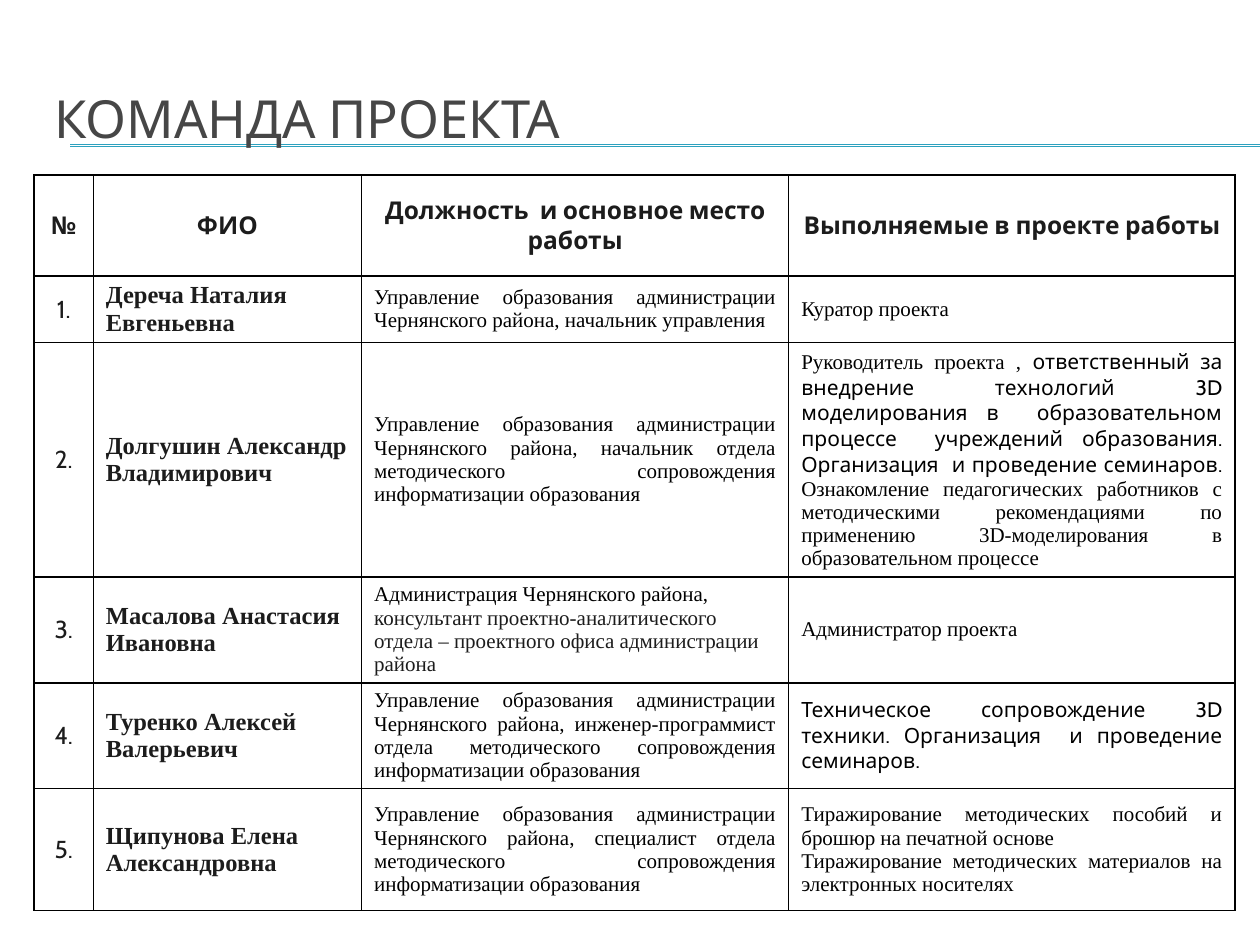
from lxml.etree import SubElement
from pptx import Presentation
from pptx.dml.color import RGBColor
from pptx.enum.shapes import MSO_CONNECTOR
from pptx.enum.text import MSO_ANCHOR, PP_ALIGN
from pptx.oxml.ns import qn
from pptx.util import Cm, Pt

COLOURS = {
    "title": "464646",
    "accent": "2DA2BF",
    "dark": "1C1C1C",
    "black": "000000",
    "white": "FFFFFF",
}
SANS, SERIF = "Cabin", "Times New Roman"
LEFT, CENTRE, JUSTIFY = PP_ALIGN.LEFT, PP_ALIGN.CENTER, PP_ALIGN.JUSTIFY

COLUMN_WIDTHS = [1.19, 5.41, 8.61, 9.0]
ROW_HEIGHTS = [2.03, 1.35, 4.72, 2.13, 2.13, 2.46]
HEADINGS = ["№", "ФИО", "Должность  и основное место работы", "Выполняемые в проекте работы"]
DEPARTMENT = "Управление образования администрации Чернянского района, "
SUPPORT = "методического сопровождения информатизации образования"


def serif(text, colour="black"):
    return text, SERIF, 12, colour, False


def sans(text):
    return text, SANS, 12, "black", False


TEAM = [
    ("Дереча Наталия Евгеньевна",
     (JUSTIFY, [[serif(DEPARTMENT + "начальник управления")]]),
     (LEFT, [[serif("Куратор проекта")]])),
    ("Долгушин Александр Владимирович",
     (JUSTIFY, [[serif(DEPARTMENT + "начальник отдела " + SUPPORT)]]),
     (JUSTIFY, [[
         serif("Руководитель проекта , "),
         sans("ответственный за внедрение технологий 3D моделирования в  образовательном "
              "процессе  учреждений образования. Организация  и проведение семинаров. "),
         serif("Ознакомление педагогических работников с методическими рекомендациями "
               "по применению 3D-моделирования в образовательном процессе"),
     ]])),
    ("Масалова Анастасия Ивановна",
     (LEFT, [[
         serif("Администрация Чернянского района, "),
         serif("консультант проектно-аналитического отдела – проектного офиса "
               "администрации района", "dark"),
     ]]),
     (JUSTIFY, [[serif("Администратор проекта")]])),
    ("Туренко Алексей Валерьевич",
     (JUSTIFY, [[serif(DEPARTMENT + "инженер-программист отдела " + SUPPORT)]]),
     (JUSTIFY, [[sans("Техническое сопровождение 3D техники. Организация  и проведение семинаров.")]])),
    ("Щипунова Елена Александровна",
     (JUSTIFY, [[serif(DEPARTMENT + "специалист отдела " + SUPPORT)]]),
     (JUSTIFY, [
         [serif("Тиражирование методических пособий и брошюр на печатной основе")],
         [serif("Тиражирование методических материалов на электронных носителях")],
     ])),
]


def colour_of(name):
    return RGBColor.from_string(COLOURS[name])


def add_run(paragraph, text, font, size, colour, bold):
    run = paragraph.add_run()
    run.text = text
    run.font.name = font
    run.font.size = Pt(size)
    run.font.bold = bold
    run.font.color.rgb = colour_of(colour)


def fill_text(frame, alignment, paragraphs):
    frame.word_wrap = True
    for index, runs in enumerate(paragraphs):
        paragraph = frame.add_paragraph() if index else frame.paragraphs[0]
        paragraph.alignment = alignment
        for run in runs:
            add_run(paragraph, *run)


def place_title(slide, left, top, width, height):
    title = slide.shapes.title
    title.left, title.top, title.width, title.height = map(Cm, (left, top, width, height))
    title.text_frame.vertical_anchor = MSO_ANCHOR.MIDDLE
    fill_text(title.text_frame, LEFT, [[("КОМАНДА ПРОЕКТА", SANS, 30, "title", False)]])


def place_rules(slide, left, top, width, gap):
    for y in (top, top + gap):
        rule = slide.shapes.add_connector(
            MSO_CONNECTOR.STRAIGHT, Cm(left), Cm(y), Cm(left + width), Cm(y))
        rule.line.color.rgb = colour_of("accent")
        rule.line.width = Pt(0.75)
        SubElement(rule._element.spPr, qn("a:effectLst"))
        slide.shapes.title._element.addprevious(rule._element)


def draw_borders(cell):
    properties = cell._tc.get_or_add_tcPr()
    for side in ("a:lnL", "a:lnR", "a:lnT", "a:lnB"):
        border = SubElement(properties, qn(side), w=str(Pt(1)))
        fill = SubElement(border, qn("a:solidFill"))
        SubElement(fill, qn("a:srgbClr"), val=COLOURS["black"])


def fill_cell(cell, alignment, paragraphs):
    draw_borders(cell)
    cell.fill.solid()
    cell.fill.fore_color.rgb = colour_of("white")
    cell.vertical_anchor = MSO_ANCHOR.MIDDLE
    fill_text(cell.text_frame, alignment, paragraphs)


def place_team_table(slide, left, top, width, height):
    table = slide.shapes.add_table(
        len(ROW_HEIGHTS), len(COLUMN_WIDTHS), Cm(left), Cm(top), Cm(width), Cm(height)).table
    table.first_row = table.horz_banding = False
    for column, size in zip(table.columns, COLUMN_WIDTHS):
        column.width = Cm(size)
    for row, size in zip(table.rows, ROW_HEIGHTS):
        row.height = Cm(size)

    rows = [[(CENTRE, [[(heading, SANS, 14, "dark", True)]]) for heading in HEADINGS]]
    for number, (name, position, work) in enumerate(TEAM, 1):
        rows.append([
            (CENTRE, [[(f"{number}.", SANS, 14, "dark", False)]]),
            (LEFT, [[(name, SERIF, 14, "dark", True)]]),
            position,
            work,
        ])
    for row, contents in zip(table.rows, rows):
        for cell, content in zip(row.cells, contents):
            fill_cell(cell, *content)


def main():
    presentation = Presentation()
    presentation.slide_width, presentation.slide_height = Cm(25.4), Cm(19.05)
    slide = presentation.slides.add_slide(presentation.slide_layouts[5])
    place_title(slide, 0.84, 1.19, 24.13, 2.34)
    place_rules(slide, 1.42, 2.92, 23.98, 0.03)
    place_team_table(slide, 0.69, 3.53, sum(COLUMN_WIDTHS), sum(ROW_HEIGHTS))
    presentation.save("out.pptx")


if __name__ == "__main__":
    main()
